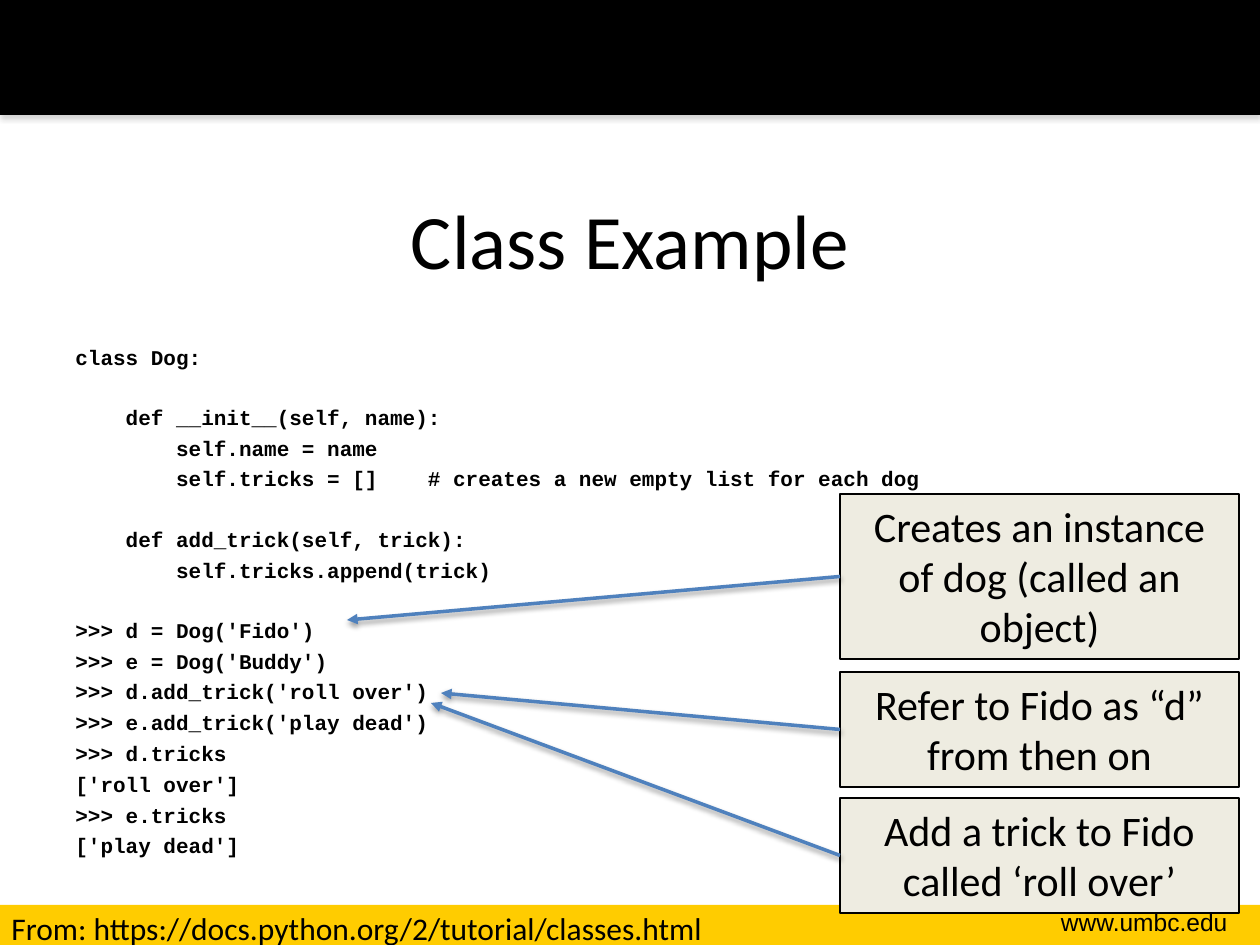
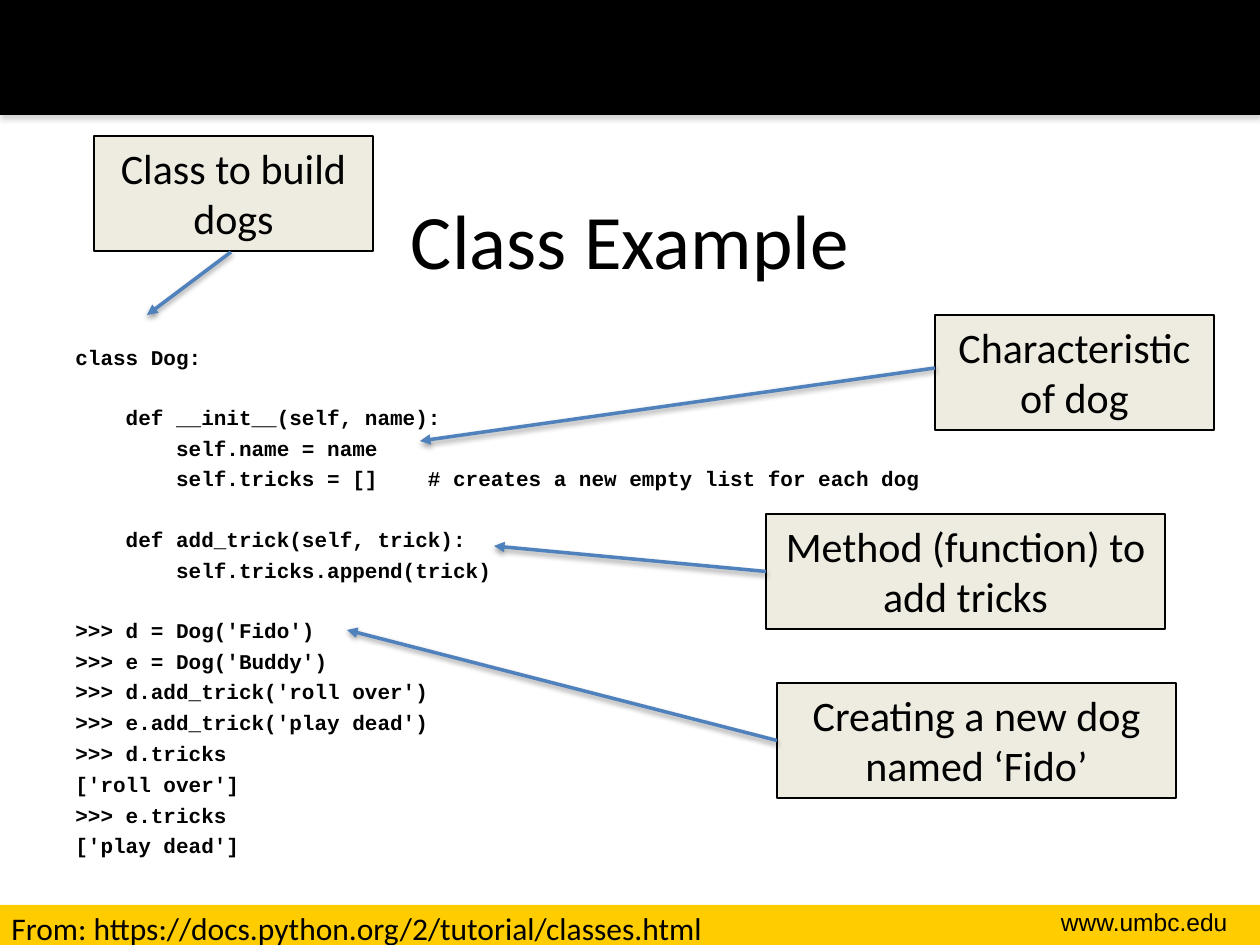
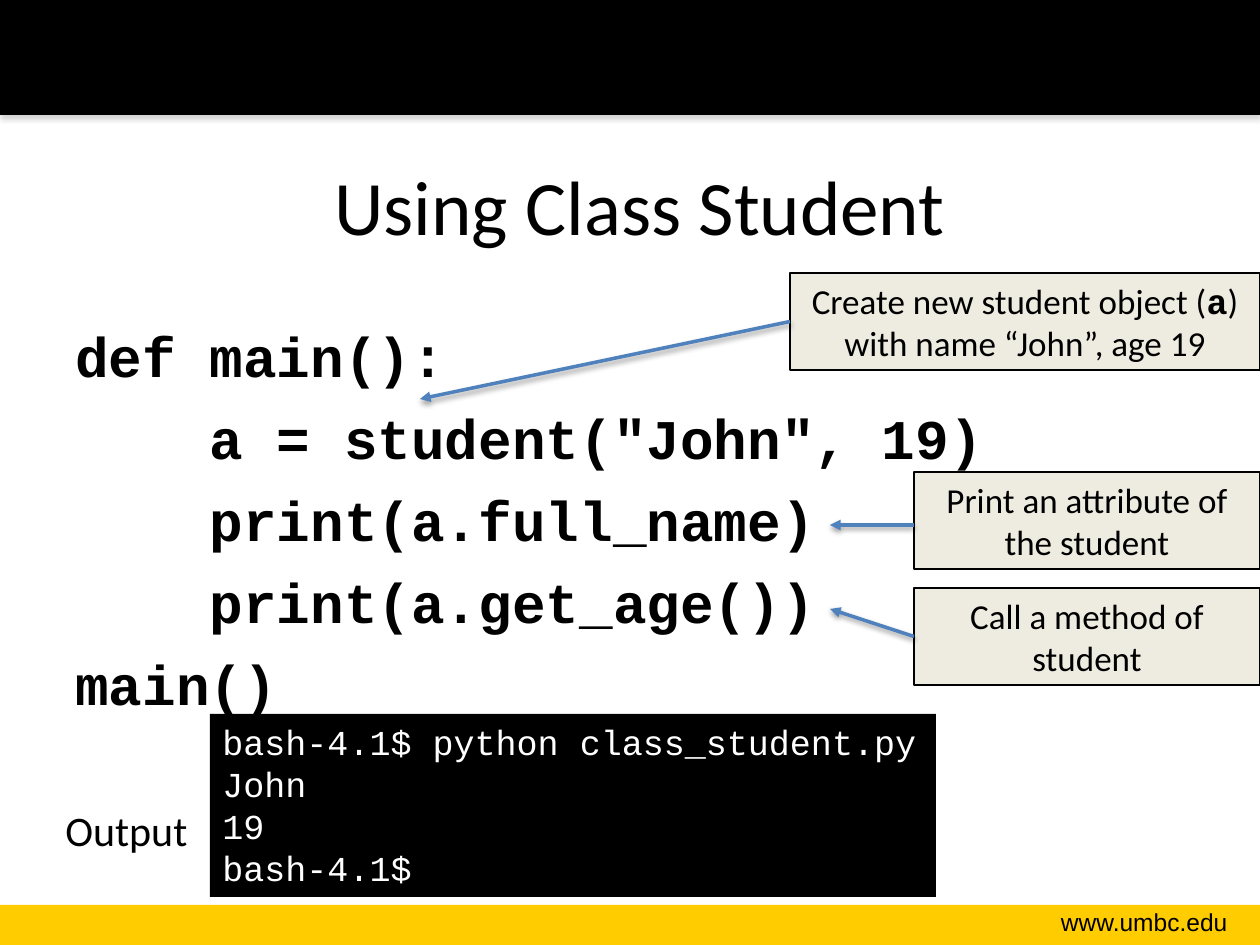
import pptx
import pptx.dml.color
import pptx.enum.shapes
import pptx.enum.text
import pptx.oxml
import pptx.oxml.ns
import pptx.util

# Shared look
PX = 914400 / 126
BLACK, WHITE, GOLD = "000000", "FFFFFF", "FFCC00"
BEIGE, BLUE, GRAY = "EEECE1", "4F81BD", "808080"
SANS, MONO, ARIAL = "Calibri", "Courier New", "Arial"
SITE = "www.umbc.edu"
CODE_GAP = 0.267    # space before a code line, per point of text size
MONO_LINE = 1.133   # line height of the code font, per point of text size
ALIGN = pptx.enum.text.PP_ALIGN

# Content
DOG_CODE = """class Dog:

    def __init__(self, name):
        self.name = name
        self.tricks = []    # creates a new empty list for each dog

    def add_trick(self, trick):
        self.tricks.append(trick)

>>> d = Dog('Fido')
>>> e = Dog('Buddy')
>>> d.add_trick('roll over')
>>> e.add_trick('play dead')
>>> d.tricks
['roll over']
>>> e.tricks
['play dead']""".split("\n")

STUDENT_CODE = [
    "def main():",
    '    a = student("John", 19)',
    "    print(a.full_name)",
    "    print(a.get_age())",
    "main()",
]
TERMINAL = ["bash-4.1$ python class_student.py", "John", "19", "bash-4.1$"]

DOG_PAGE = {
    "title": "Class Example", "title_box": (63, 160, 1134, 158),
    "code": DOG_CODE, "code_box": (63, 338, 998, 507), "code_size": 12,
    "source": "From: https://docs.python.org/2/tutorial/classes.html",
    "note_size": 24,
}

# Each note: text, box, arrow tip and, if not the middle of the left edge, arrow start
SLIDES = [
    DOG_PAGE | {"notes": [
        ("Creates an instance of dog (called an object)", (840, 494, 399, 165), (347, 620)),
        ("Refer to Fido as “d” from then on", (840, 672, 399, 115), (441, 693)),
        ("Add a trick to Fido called ‘roll over’", (840, 798, 399, 115), (431, 703)),
    ]},
    DOG_PAGE | {"notes": [
        ("Class to build dogs", (94, 136, 279, 115), (147, 315), (231, 252)),
        ("Characteristic of dog", (935, 315, 279, 115), (420, 441), (935, 368)),
        ("Method (function) to add tricks", (766, 514, 399, 115), (494, 546)),
        ("Creating a new dog named ‘Fido’", (777, 683, 399, 115), (347, 630)),
    ]},
    {
        "title": "Using Class Student", "title_box": (73, 126, 1134, 158),
        "code": STUDENT_CODE, "code_box": (63, 315, 945, 507), "code_size": 32,
        "terminal": TERMINAL, "note_size": 20,
        "notes": [
            (["Create new student object (", ("a", MONO, True), ") with name “John”, age 19"],
             (790, 273, 470, 97), (420, 399)),
            ("Print an attribute of the student", (914, 472, 346, 97), (830, 525), (914, 525)),
            ("Call a method of student", (914, 588, 346, 97), (830, 609)),
        ],
    },
]


# Helpers
def emu(*lengths):
    return [pptx.util.Emu(round(n * PX)) for n in lengths]


def rgb(code):
    return pptx.dml.color.RGBColor.from_string(code)


def paint(shape, fill, line=None):
    shape.fill.solid()
    shape.fill.fore_color.rgb = rgb(fill)
    if line:
        shape.line.color.rgb = rgb(line)
        shape.line.width = pptx.util.Pt(0.75)
    else:
        shape.line.fill.background()


def add_shadow(shape, color, alpha, distance):
    """Cast a soft shadow straight down; call after the line is set."""
    shape._element.spPr.append(pptx.oxml.parse_xml(
        f'<a:effectLst {pptx.oxml.ns.nsdecls("a")}>'
        f'<a:outerShdw blurRad="{pptx.util.Pt(3.1)}" dist="{pptx.util.Pt(distance)}" '
        f'dir="5400000" rotWithShape="0"><a:srgbClr val="{color}">'
        f'<a:alpha val="{alpha * 1000}"/></a:srgbClr></a:outerShdw></a:effectLst>'))


def add_run(p, text, size, font=SANS, color=BLACK, bold=False):
    r = p.add_run()
    r.text = text
    r.font.name = font
    r.font.size = pptx.util.Pt(size)
    r.font.bold = bold
    r.font.color.rgb = rgb(color)


def add_box(s, box, wrap=True):
    sp = s.shapes.add_textbox(*emu(*box))
    sp.text_frame.word_wrap = wrap
    return sp


def add_label(s, box, text, size, font=SANS, wrap=True, align=ALIGN.LEFT):
    p = add_box(s, box, wrap).text_frame.paragraphs[0]
    p.alignment = align
    add_run(p, text, size, font)


def add_lines(tf, lines, size, gap=0, **look):
    """One paragraph a line; an empty line widens the space before the next."""
    first, extra = True, 0
    for line in lines:
        if not line:
            extra += gap + size * MONO_LINE
            continue
        p = tf.paragraphs[0] if first else tf.add_paragraph()
        p.space_before = pptx.util.Pt(0 if first else round(gap + extra, 1))
        add_run(p, line, size, MONO, **look)
        first, extra = False, 0


# Parts of a slide
def add_bands(s):
    for box, color in (((0, 905, 1260, 40), GOLD), ((0, 0, 1260, 115), BLACK)):
        sp = s.shapes.add_shape(pptx.enum.shapes.MSO_SHAPE.RECTANGLE, *emu(*box))
        paint(sp, color)
        if color == BLACK:
            add_shadow(sp, GRAY, 35, 1.8)
        else:
            sp.shadow.inherit = False
    add_label(s, (989, 901, 251, 43), SITE, 14, ARIAL, align=ALIGN.RIGHT)


def set_title(s, text, box):
    sp = s.shapes.title
    sp.left, sp.top, sp.width, sp.height = emu(*box)
    tf = sp.text_frame
    tf.vertical_anchor = pptx.enum.text.MSO_ANCHOR.MIDDLE
    p = tf.paragraphs[0]
    p.alignment = ALIGN.CENTER
    add_run(p, text, 44)


def add_arrow(s, start, tip):
    line = s.shapes.add_connector(
        pptx.enum.shapes.MSO_CONNECTOR.STRAIGHT, *emu(*start, *tip))
    line.line.color.rgb = rgb(BLUE)
    line.line.width = pptx.util.Pt(2)
    line.line._get_or_add_ln().append(pptx.oxml.parse_xml(
        f'<a:tailEnd {pptx.oxml.ns.nsdecls("a")} type="triangle"/>'))
    add_shadow(line, BLACK, 38, 1.6)


def add_note(s, size, text, box, tip, start=None):
    sp = add_box(s, box)
    paint(sp, BEIGE, BLACK)
    p = sp.text_frame.paragraphs[0]
    p.alignment = ALIGN.CENTER
    for part in [text] if isinstance(text, str) else text:
        words, font, bold = (part, SANS, False) if isinstance(part, str) else part
        add_run(p, words, size, font, bold=bold)
    left, top, _, height = box
    add_arrow(s, start or (left, top + height / 2), tip)


def add_terminal(s, lines):
    sp = add_box(s, (210, 714, 726, 183), wrap=False)
    paint(sp, BLACK)
    add_lines(sp.text_frame, lines, 20, color=WHITE)
    add_label(s, (53, 798, 149, 63), "Output", 24, wrap=False)


def main():
    prs = pptx.Presentation()
    prs.slide_width, prs.slide_height = emu(1260, 945)
    for page in SLIDES:
        s = prs.slides.add_slide(prs.slide_layouts[5])
        add_bands(s)
        set_title(s, page["title"], page["title_box"])
        size = page["code_size"]
        add_lines(add_box(s, page["code_box"]).text_frame, page["code"], size,
                  size * CODE_GAP, bold=True)
        if "source" in page:
            add_label(s, (-1, 903, 725, 50), page["source"], 18, wrap=False)
        if "terminal" in page:
            add_terminal(s, page["terminal"])
        for note in page["notes"]:
            add_note(s, page["note_size"], *note)
    prs.save("out.pptx")


if __name__ == "__main__":
    main()
